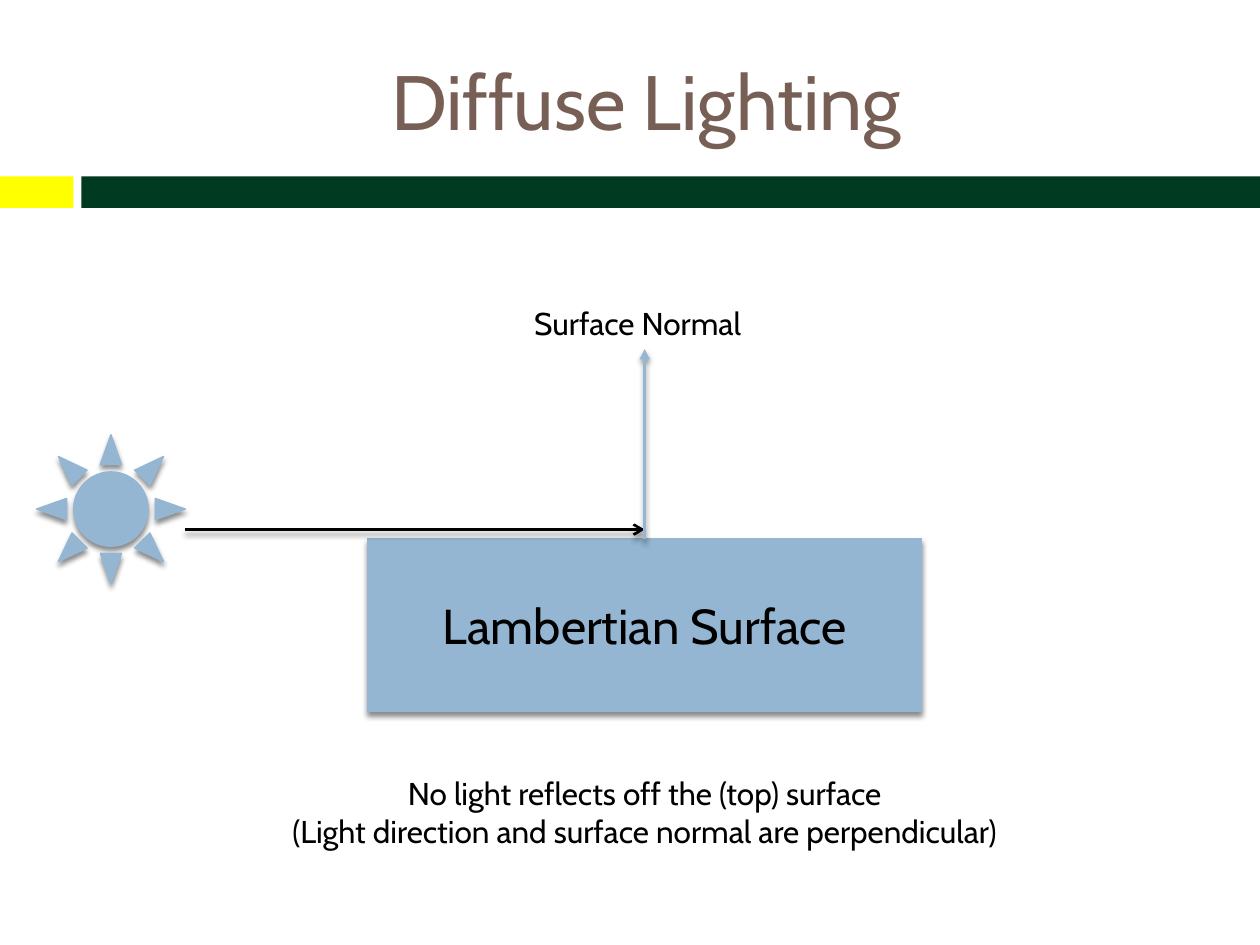
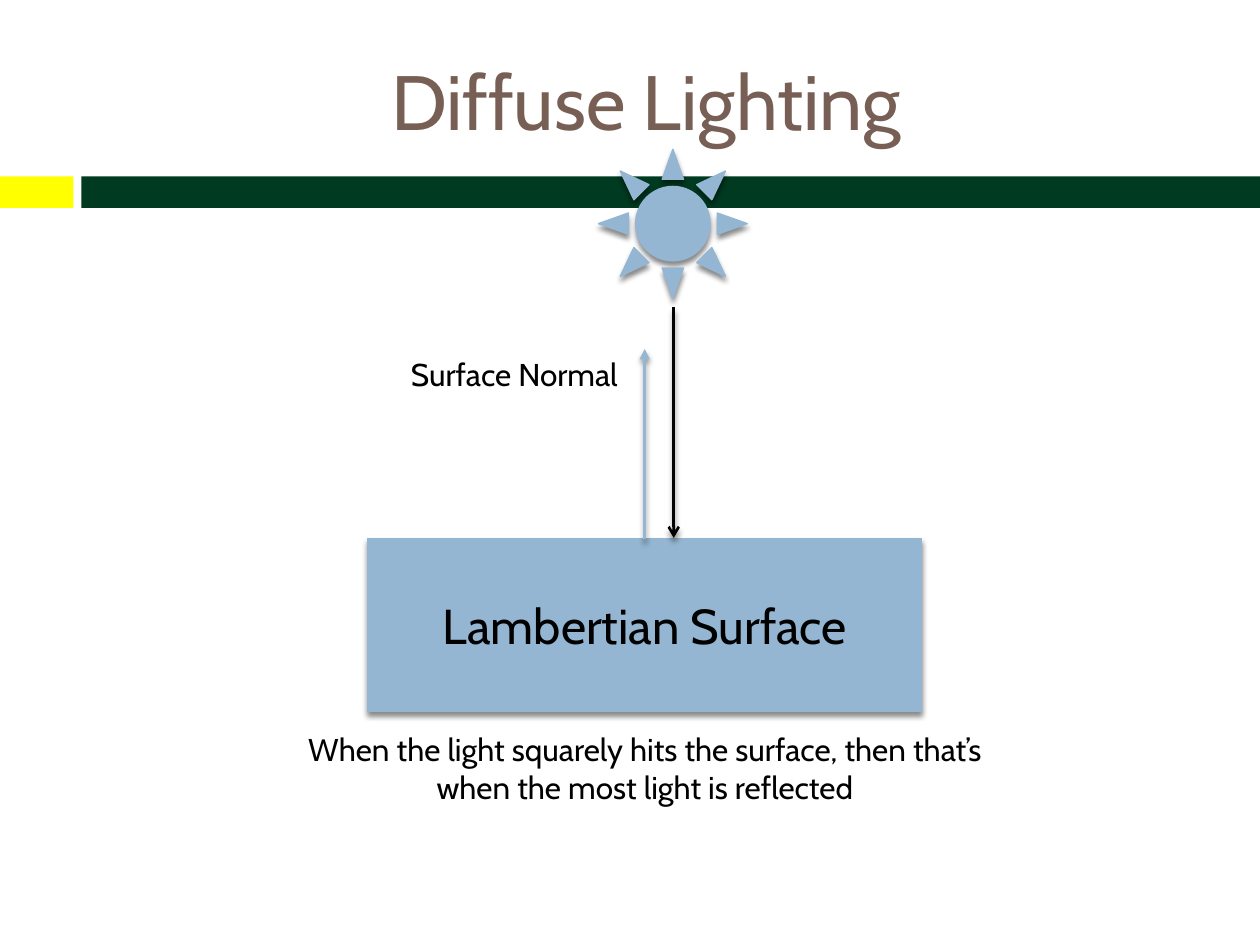
from dataclasses import dataclass

from lxml import etree
from pptx import Presentation
from pptx.dml.color import RGBColor
from pptx.enum import shapes, text
from pptx.oxml import ns
from pptx.util import Pt

# Content: lengths in points; boxes are (left, top, width, height)
TITLE = "Diffuse Lighting"
SURFACE = "Lambertian Surface"
NORMAL = "Surface Normal"
SLIDES = [
    {
        "sun": (20.9, 248.4),
        "light": ((105.8, 302.6), (368.4, 302.6)),
        "normal_label": (298.2, 170.2, 141.1, 29.1),
        "caption_box": (144.8, 438.8, 447.1, 51),
        "caption": ["No light reflects off the (top) surface",
                    "(Light direction and surface normal are perpendicular)"],
        "wrap": False,
    },
    {
        "sun": (342, 85.3),
        "light": ((385, 175.7), (385, 307.4)),
        "normal_label": (227.7, 199.4, 141.1, 29.1),
        "caption_box": (166.5, 413.6, 404, 51),
        "caption": ["When the light squarely hits the surface, then that’s "
                    "when the most light is reflected"],
        "wrap": True,
    },
]

# Shared geometry
PAGE = (720, 540)
TITLE_BOX = (48.2, 18, 642.2, 77.8)
BAND_TOP, BAND_HEIGHT = 100.8, 18
TAB_WIDTH, BAND_LEFT = 42, 46.5
SURFACE_BOX = (210.2, 307.8, 316.4, 98.6)
SUN_SIZE = 85
NORMAL_ARROW = ((368.4, 308.2), (368.4, 199.4))


@dataclass(frozen=True)
class Theme:
    font: str = "Cabin"
    title: str = "775F55"
    ink: str = "000000"
    blue: str = "94B6D2"
    green: str = "003A20"
    yellow: str = "FFFF00"
    title_size: float = 44
    surface_size: float = 28
    body_size: float = 18
    outline: float = 0.79
    arrow: float = 1.5


T = Theme()
SHADOW = {"blurRad": Pt(3), "dist": Pt(2.4), "dir": 90 * 60000, "rotWithShape": 0}
ALIGN = text.PP_ALIGN


def rgb(color):
    return RGBColor.from_string(color)


def points(values):
    return [Pt(v) for v in values]


def add_shadow(sp):
    """Give a shape or connector the soft shadow below it."""
    effects = etree.SubElement(sp._element.spPr, ns.qn("a:effectLst"))
    outer = etree.SubElement(effects, ns.qn("a:outerShdw"),
                             {k: str(int(v)) for k, v in SHADOW.items()})
    color = etree.SubElement(outer, ns.qn("a:srgbClr"), val=T.ink)
    etree.SubElement(color, ns.qn("a:alpha"), val="45000")


def write(sp, lines, size, color=T.ink, align=ALIGN.CENTER,
          anchor=text.MSO_ANCHOR.MIDDLE, wrap=True):
    tf = sp.text_frame
    frame = {"word_wrap": wrap, "vertical_anchor": anchor,
             "auto_size": text.MSO_AUTO_SIZE.NONE}
    for name, value in frame.items():
        setattr(tf, name, value)
    for i, line in enumerate(lines):
        p = tf.add_paragraph() if i else tf.paragraphs[0]
        p.alignment = align
        r = p.add_run()
        r.text = line
        for name, value in {"name": T.font, "size": Pt(size)}.items():
            setattr(r.font, name, value)
        r.font.color.rgb = rgb(color)


def add_block(s, kind, box, color):
    sp = s.shapes.add_shape(kind, *points(box))
    sp.fill.solid()
    sp.fill.fore_color.rgb = rgb(color)
    sp.line.fill.background()
    sp.shadow.inherit = False
    return sp


def add_raised(s, kind, box):
    """Add an outlined blue shape with a shadow."""
    sp = add_block(s, kind, box, T.blue)
    sp.line.color.rgb = rgb(T.blue)
    sp.line.width = Pt(T.outline)
    sp._element.spPr.remove(sp._element.spPr.find(ns.qn("a:effectLst")))
    add_shadow(sp)
    return sp


def add_arrow(s, ends, color, head):
    start, end = ends
    line = s.shapes.add_connector(shapes.MSO_CONNECTOR.STRAIGHT,
                                  *points(start + end))
    line.line.color.rgb = rgb(color)
    line.line.width = Pt(T.arrow)
    etree.SubElement(line.line._get_or_add_ln(), ns.qn("a:tailEnd"), type=head)
    add_shadow(line)


def add_label(s, box, lines, **style):
    sp = s.shapes.add_textbox(*points(box))
    write(sp, lines, T.body_size, anchor=text.MSO_ANCHOR.TOP, **style)


def add_frame(s):
    """Place the title and the two-colour band."""
    title = s.shapes.title
    for name, value in zip(("left", "top", "width", "height"), points(TITLE_BOX)):
        setattr(title, name, value)
    write(title, [TITLE], T.title_size, T.title)
    for left, width, color in ((0, TAB_WIDTH, T.yellow),
                               (BAND_LEFT, PAGE[0] - BAND_LEFT, T.green)):
        add_block(s, shapes.MSO_SHAPE.RECTANGLE,
                  (left, BAND_TOP, width, BAND_HEIGHT), color)


def build_slide(prs, scene):
    s = prs.slides.add_slide(prs.slide_layouts[5])
    add_frame(s)
    # Surface and light source
    surface = add_raised(s, shapes.MSO_SHAPE.RECTANGLE, SURFACE_BOX)
    write(surface, [SURFACE], T.surface_size)
    add_raised(s, shapes.MSO_SHAPE.SUN, scene["sun"] + (SUN_SIZE, SUN_SIZE))
    # Light direction and surface normal
    add_arrow(s, scene["light"], T.ink, "arrow")
    add_arrow(s, NORMAL_ARROW, T.blue, "triangle")
    # Labels
    add_label(s, scene["normal_label"], [NORMAL], align=ALIGN.LEFT, wrap=False)
    add_label(s, scene["caption_box"], scene["caption"], wrap=scene["wrap"])


def main():
    prs = Presentation()
    prs.slide_width, prs.slide_height = points(PAGE)
    for scene in SLIDES:
        build_slide(prs, scene)
    prs.save("out.pptx")


if __name__ == "__main__":
    main()
